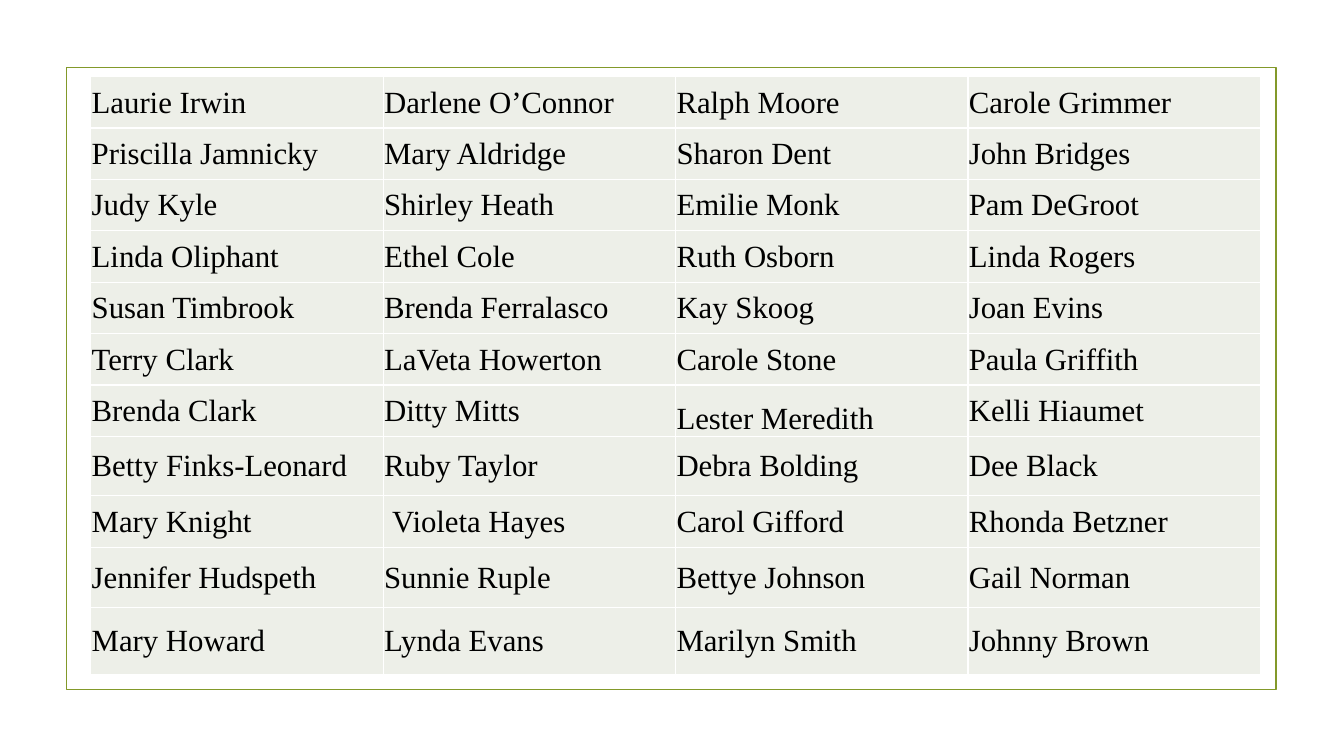
from pptx import Presentation
from pptx.dml.color import RGBColor
from pptx.enum import shapes, text
from pptx.util import Inches, Pt

OLIVE = RGBColor(0x83, 0x99, 0x2A)
PALE = RGBColor(0xED, 0xEF, 0xE8)
BLACK = RGBColor(0, 0, 0)
FONT = "Times New Roman"

NAMES = [
    ("Laurie Irwin", "Darlene O’Connor", "Ralph Moore", "Carole Grimmer"),
    ("Priscilla Jamnicky", "Mary Aldridge", "Sharon Dent", "John Bridges"),
    ("Judy Kyle", "Shirley Heath", "Emilie Monk", "Pam DeGroot"),
    ("Linda Oliphant", "Ethel Cole", "Ruth Osborn", "Linda Rogers"),
    ("Susan Timbrook", "Brenda Ferralasco", "Kay Skoog", "Joan Evins"),
    ("Terry Clark", "LaVeta Howerton", "Carole Stone", "Paula Griffith"),
    ("Brenda Clark", "Ditty Mitts", "Lester Meredith", "Kelli Hiaumet"),
    ("Betty Finks-Leonard", "Ruby Taylor", "Debra Bolding", "Dee Black"),
    ("Mary Knight", "Violeta Hayes", "Carol Gifford", "Rhonda Betzner"),
    ("Jennifer Hudspeth", "Sunnie Ruple", "Bettye Johnson", "Gail Norman"),
    ("Mary Howard", "Lynda Evans", "Marilyn Smith", "Johnny Brown"),
]
ROW = 0.51
TALL = {7: 0.59, 9: 0.6, 10: 0.66}  # rows higher than the rest
COL = 2.9
LOW = "Lester Meredith"  # sits at the foot of its cell
INSET = "Violeta Hayes"  # slightly indented


def add_frame(slide):
    box = slide.shapes.add_shape(
        shapes.MSO_SHAPE.RECTANGLE,
        Inches(0.66), Inches(0.67), Inches(12), Inches(6.17))
    box.shadow.inherit = False
    box.fill.background()
    box.line.color.rgb = OLIVE
    box.line.width = Pt(1.25)


def fill_cell(cell, name):
    cell.fill.solid()
    cell.fill.fore_color.rgb = PALE
    cell.margin_left = Inches(0.09 if name == INSET else 0.01)
    cell.margin_right = cell.margin_top = Inches(0.01)
    cell.margin_bottom = 0
    anchor = text.MSO_ANCHOR
    cell.vertical_anchor = anchor.BOTTOM if name == LOW else anchor.MIDDLE
    para = cell.text_frame.paragraphs[0]
    para.text = name
    font = para.runs[0].font
    font.name = FONT
    font.size = Pt(22)
    font.color.rgb = BLACK


def add_names(slide):
    highs = [TALL.get(i, ROW) for i in range(len(NAMES))]
    cols = len(NAMES[0])
    table = slide.shapes.add_table(
        len(NAMES), cols, Inches(0.9), Inches(0.76),
        Inches(COL * cols), Inches(sum(highs))).table
    # The plain style keeps thin white rules between cells
    table.first_row = False
    table.horz_banding = False
    for col in table.columns:
        col.width = Inches(COL)
    for r, (high, names) in enumerate(zip(highs, NAMES)):
        table.rows[r].height = Inches(high)
        for c, name in enumerate(names):
            fill_cell(table.cell(r, c), name)


def main():
    deck = Presentation()
    deck.slide_width = Inches(13.33)
    deck.slide_height = Inches(7.5)
    slide = deck.slides.add_slide(deck.slide_layouts[6])
    add_frame(slide)
    add_names(slide)
    deck.save("out.pptx")


if __name__ == "__main__":
    main()
